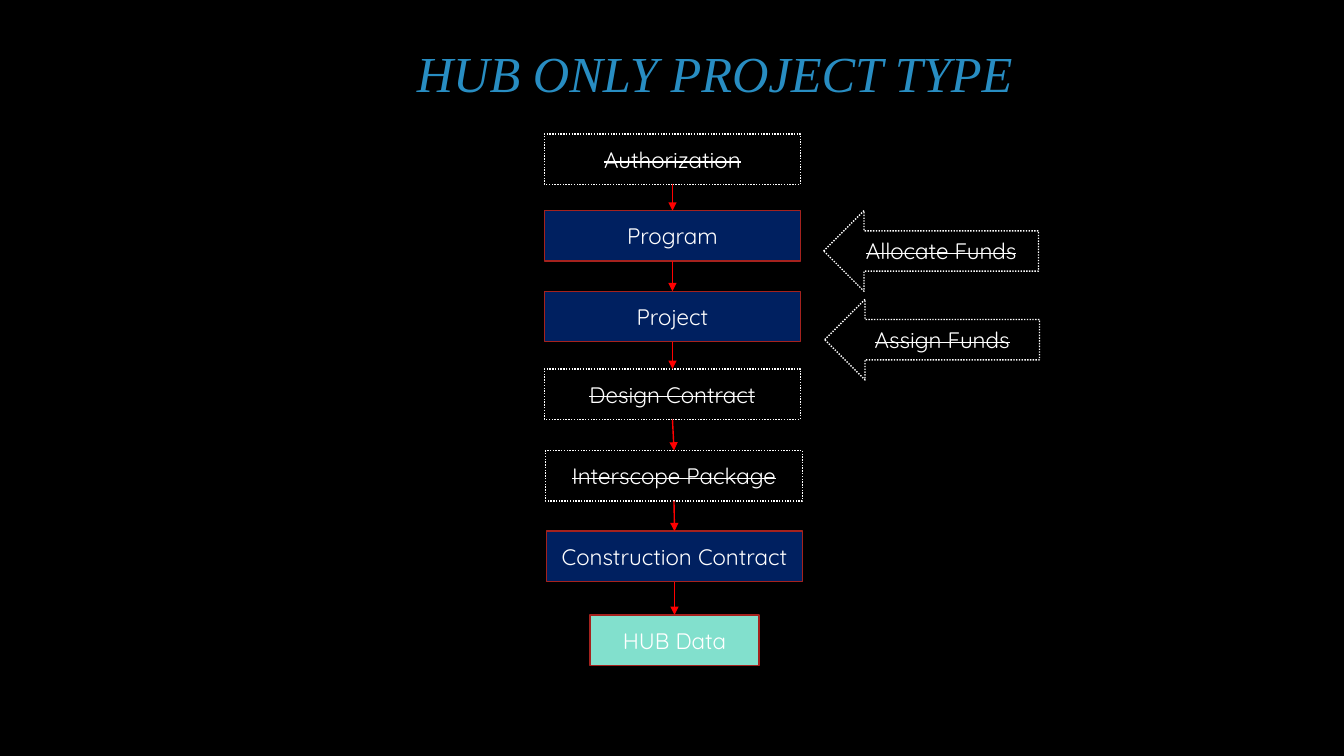
from itertools import pairwise

from lxml import etree
from pptx import Presentation
from pptx import util as u
from pptx.dml.color import RGBColor
from pptx.enum import dml, shapes, text
from pptx.oxml.ns import qn

COLORS = {
    "background": "000000",
    "title": "288DC2",
    "text": "FFFFFF",
    "active": "002060",
    "data": "82E0CD",
    "border": "A5221E",
    "dotted": "FFFFFF",
    "flow": "FF0000",
}
BODY_FONT = "Quicksand"
STEP_HEIGHT = 0.5

# label, left, top, width, fill colour, skipped
STEPS = [
    ("Authorization", 5.4, 1.33, 2.54, "background", True),
    ("Program", 5.4, 2.09, 2.54, "active", False),
    ("Project", 5.4, 2.89, 2.54, "active", False),
    ("Design Contract", 5.4, 3.66, 2.54, "background", True),
    ("Interscope Package", 5.41, 4.47, 2.55, "background", True),
    ("Construction Contract", 5.42, 5.27, 2.54, "active", False),
    ("HUB Data", 5.85, 6.1, 1.68, "data", False),
]
FUNDING = [("Allocate Funds", 8.17, 2.09), ("Assign Funds", 8.18, 2.97)]


def color(name):
    return RGBColor.from_string(COLORS[name])


def add_title(s, box, label):
    sp = s.shapes.title
    sp.left, sp.top, sp.width, sp.height = map(u.Inches, box)
    tf = sp.text_frame
    tf.vertical_anchor = text.MSO_ANCHOR.MIDDLE
    p = tf.paragraphs[0]
    p.alignment = text.PP_ALIGN.CENTER
    p.line_spacing = 0.9
    r = p.add_run()
    r.text = label
    r.font.name = "Times New Roman"
    r.font.size = u.Pt(36)
    r.font.italic = True
    r.font.color.rgb = color("title")


def add_block(s, kind, box, label, fill, skipped):
    """Draw a labelled shape; a skipped one is dotted and struck through."""
    sp = s.shapes.add_shape(kind, *map(u.Inches, box))
    sp.shadow.inherit = False
    sp.fill.solid()
    sp.fill.fore_color.rgb = color(fill)
    sp.line.width = u.Pt(1)
    sp.line.color.rgb = color("dotted" if skipped else "border")
    tf = sp.text_frame
    tf.word_wrap = True
    tf.vertical_anchor = text.MSO_ANCHOR.MIDDLE
    p = tf.paragraphs[0]
    p.alignment = text.PP_ALIGN.CENTER
    r = p.add_run()
    r.text = label
    r.font.name = BODY_FONT
    r.font.size = u.Pt(16)
    r.font.color.rgb = color("text")
    if skipped:
        sp.line.dash_style = dml.MSO_LINE.ROUND_DOT
        r._r.get_or_add_rPr().set("strike", "sngStrike")
    return sp


def add_flow_arrow(s, upper, lower):
    """Connect the bottom of one step to the top of the next."""
    arrow = s.shapes.add_connector(shapes.MSO_CONNECTOR.STRAIGHT, 0, 0, 0, 0)
    arrow.begin_connect(upper, 2)
    arrow.end_connect(lower, 0)
    arrow.line.width = u.Pt(1)
    arrow.line.color.rgb = color("flow")
    etree.SubElement(arrow.line._get_or_add_ln(), qn("a:tailEnd"), type="triangle")
    etree.SubElement(arrow._element.spPr, qn("a:effectLst"))


def add_steps(s):
    blocks = [
        add_block(s, shapes.MSO_SHAPE.RECTANGLE,
                  (left, top, width, STEP_HEIGHT), label, fill, skipped)
        for label, left, top, width, fill, skipped in STEPS
    ]
    for upper, lower in pairwise(blocks):
        add_flow_arrow(s, upper, lower)


def add_funding(s):
    for label, left, top in FUNDING:
        add_block(s, shapes.MSO_SHAPE.LEFT_ARROW, (left, top, 2.13, 0.8),
                  label, "background", True)


def main():
    prs = Presentation()
    prs.slide_width, prs.slide_height = u.Inches(13.33), u.Inches(7.5)
    s = prs.slides.add_slide(prs.slide_layouts[5])
    s.background.fill.solid()
    s.background.fill.fore_color.rgb = color("background")
    add_title(s, (2.58, 0.18, 9.02, 1.16), "HUB ONLY PROJECT TYPE")
    add_steps(s)
    add_funding(s)
    prs.save("out.pptx")


if __name__ == "__main__":
    main()
